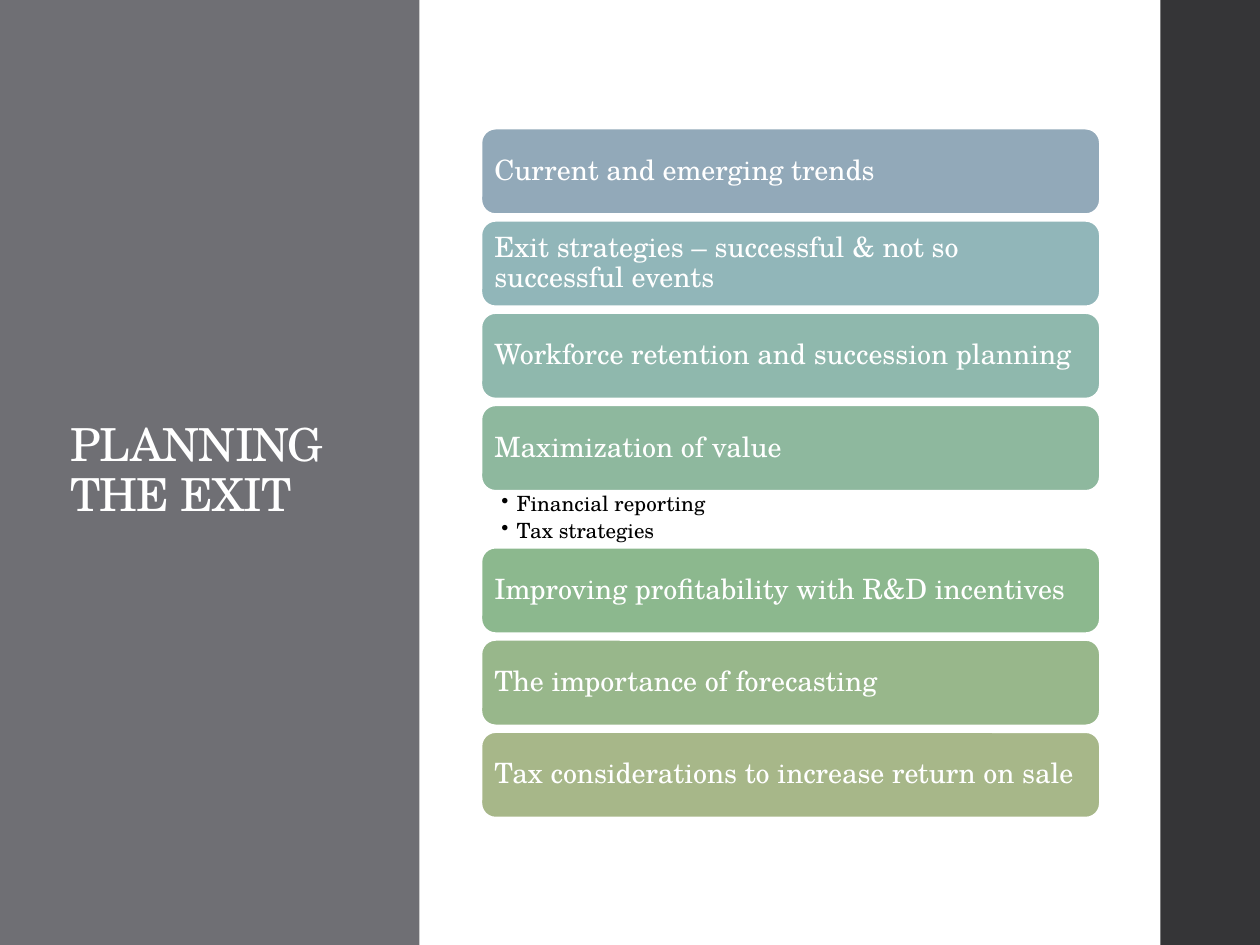
from lxml.etree import SubElement
from pptx import Presentation
from pptx.dml.color import RGBColor
from pptx.enum.shapes import MSO_SHAPE
from pptx.enum.text import MSO_ANCHOR, PP_ALIGN
from pptx.oxml.ns import qn
from pptx.util import Inches, Pt

COLORS = {"white": "FFFFFF", "black": "000000", "panel": "6F6F74", "edge": "353537"}

# Topic, bar colour, notes under the bar
TOPICS = [
    ("Current and emerging trends", "92A9B9", []),
    ("Exit strategies – successful & not so successful events", "91B6B9", []),
    ("Workforce retention and succession planning", "8FB8AD", []),
    ("Maximization of value", "8EB89E", ["Financial reporting", "Tax strategies"]),
    ("Improving profitability with R&D incentives", "8CB88E", []),
    ("The importance of forecasting", "98B78B", []),
    ("Tax considerations to increase return on sale", "A7B789", []),
]

# Grid of 100 columns by 75 rows
COLUMNS, ROWS = 100, 75
LIST_LEFT, LIST_WIDTH = 38.2, 49.1
LIST_TOP, LIST_BOTTOM = 10.2, 64.9
BAR_HEIGHT, NOTES_HEIGHT = 6.8, 4.5


class SlideBuilder:
    font_name = "TeX Gyre Schola"
    line_spacing = 0.9

    def __init__(self, deck):
        self.page = deck.slides.add_slide(deck.slide_layouts[6])
        self.column = deck.slide_width / COLUMNS
        self.row = deck.slide_height / ROWS

    def place(self, left, top, width, height):
        """Turn grid units into slide lengths."""
        return (round(left * self.column), round(top * self.row),
                round(width * self.column), round(height * self.row))

    def shape(self, kind, area, fill):
        shape = self.page.shapes.add_shape(kind, *self.place(*area))
        shape.shadow.inherit = False
        shape.fill.solid()
        shape.fill.fore_color.rgb = RGBColor.from_string(fill)
        shape.line.fill.background()
        return shape

    def set_text(self, box, lines, size, color, insets, anchor=MSO_ANCHOR.MIDDLE):
        """Fill a box with lines of text; insets are left, top, right, bottom in inches."""
        frame = box.text_frame
        frame.word_wrap = True
        frame.vertical_anchor = anchor
        (frame.margin_left, frame.margin_top,
         frame.margin_right, frame.margin_bottom) = map(Inches, insets)
        frame.text = "\n".join(lines)
        for para in frame.paragraphs:
            para.alignment = PP_ALIGN.LEFT
            para.line_spacing = self.line_spacing
            para.font.name = self.font_name
            para.font.size = Pt(size)
            para.font.color.rgb = RGBColor.from_string(color)
        return frame.paragraphs

    def text_box(self, area):
        return self.page.shapes.add_textbox(*self.place(*area))

    def title(self, text, area):
        box = self.text_box(area)
        para, = self.set_text(box, [text], 26, COLORS["white"], (0.1, 0.05, 0.1, 0.05))
        para.runs[0]._r.get_or_add_rPr().set("spc", "-50")

    def bar(self, text, area, fill):
        bar = self.shape(MSO_SHAPE.ROUNDED_RECTANGLE, area, fill)
        bar.line.color.rgb = RGBColor.from_string(COLORS["white"])
        bar.line.width = Pt(1.1)
        self.set_text(bar, [text], 16, COLORS["white"], (0.07,) * 4)

    def bullets(self, lines, area):
        paras = self.set_text(self.text_box(area), lines, 12, COLORS["black"],
                              (0.16, 0.02, 0.12, 0.02), MSO_ANCHOR.TOP)
        for para in paras:
            para.space_after = Pt(2.4)
            properties = para._p.get_or_add_pPr()
            properties.set("marL", str(Inches(0.12)))
            properties.set("indent", str(-Inches(0.12)))
            bullet = SubElement(properties, qn("a:buChar"), char="•")
            properties.find(qn("a:defRPr")).addprevious(bullet)


def main():
    deck = Presentation()
    deck.slide_width, deck.slide_height = Inches(10), Inches(7.5)
    builder = SlideBuilder(deck)

    builder.shape(MSO_SHAPE.RECTANGLE, (92.1, 0, 7.9, ROWS), COLORS["edge"])
    builder.shape(MSO_SHAPE.RECTANGLE, (0, 0, 33.3, ROWS), COLORS["panel"])
    builder.title("PLANNING THE EXIT", (4.6, 9.1, 22.3, 56.7))

    # Notes stand in for the gap after their bar; the other gaps are equal.
    gap_count = sum(not notes for _, _, notes in TOPICS[:-1])
    used = len(TOPICS) * BAR_HEIGHT + NOTES_HEIGHT
    gap = (LIST_BOTTOM - LIST_TOP - used) / gap_count
    top = LIST_TOP
    for topic, fill, notes in TOPICS:
        builder.bar(topic, (LIST_LEFT, top, LIST_WIDTH, BAR_HEIGHT), fill)
        top += BAR_HEIGHT
        if notes:
            builder.bullets(notes, (LIST_LEFT, top, LIST_WIDTH, NOTES_HEIGHT))
        top += NOTES_HEIGHT if notes else gap

    deck.save("out.pptx")


if __name__ == "__main__":
    main()
